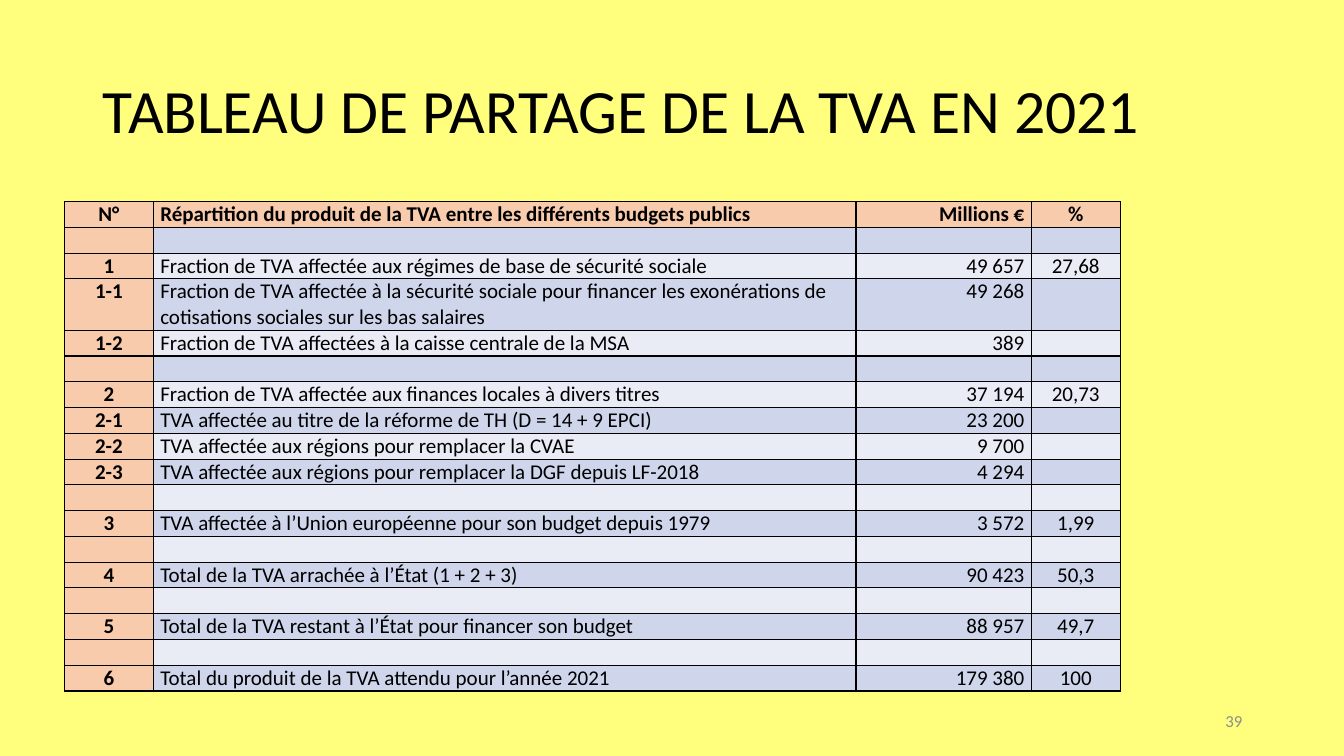
from dataclasses import dataclass

from lxml.etree import SubElement
from pptx import Presentation
from pptx.dml.color import RGBColor
from pptx.enum.text import MSO_ANCHOR as ANCHOR, MSO_AUTO_SIZE as AUTO, PP_ALIGN as ALIGN
from pptx.oxml.ns import qn
from pptx.util import Inches, Pt


@dataclass(frozen=True)
class Theme:
    font: str = "Calibri"
    background: str = "FFFF7D"
    text: str = "000000"
    muted: str = "8C8C8C"
    heading: str = "F8CBAD"
    bands: tuple = ("E9EBF5", "CFD5EA")
    title_size: int = 44
    table_size: int = 15
    number_size: int = 12


THEME = Theme()
COLUMNS = (0.88, 6.97, 1.74, 0.88)
ALIGNMENTS = (ALIGN.CENTER, ALIGN.LEFT, ALIGN.RIGHT, ALIGN.CENTER)
ROW_HEIGHT = 0.25
BLANK = ("", "", "", "")
ROWS = (
    ("N°", "Répartition du produit de la TVA entre les différents budgets publics", "Millions €", "%"),
    BLANK,
    ("1", "Fraction de TVA affectée aux régimes de base de sécurité sociale", "49 657", "27,68"),
    ("1-1", "Fraction de TVA affectée à la sécurité sociale pour financer les exonérations de "
            "cotisations sociales sur les bas salaires", "49 268", ""),
    ("1-2", "Fraction de TVA affectées à la caisse centrale de la MSA", "389", ""),
    BLANK,
    ("2", "Fraction de TVA affectée aux finances locales à divers titres", "37 194", "20,73"),
    ("2-1", "TVA affectée au titre de la réforme de TH (D = 14 + 9 EPCI)", "23 200", ""),
    ("2-2", "TVA affectée aux régions pour remplacer la CVAE", "9 700", ""),
    ("2-3", "TVA affectée aux régions pour remplacer la DGF depuis LF-2018", "4 294", ""),
    BLANK,
    ("3", "TVA affectée à l’Union européenne pour son budget depuis 1979", "3 572", "1,99"),
    BLANK,
    ("4", "Total de la TVA arrachée à l’État (1 + 2 + 3)", "90 423", "50,3"),
    BLANK,
    ("5", "Total de la TVA restant à l’État pour financer son budget", "88 957", "49,7"),
    BLANK,
    ("6", "Total du produit de la TVA attendu pour l’année 2021", "179 380", "100"),
)
TALL_ROW = 3


def format_paragraph(p, size, color, align, bold=False):
    p.alignment = align
    p.font.name = THEME.font
    p.font.size = Pt(size)
    p.font.bold = bold
    p.font.color.rgb = RGBColor.from_string(color)


def add_borders(cell):
    tc_pr = cell._tc.get_or_add_tcPr()
    for side in ("a:lnL", "a:lnR", "a:lnT", "a:lnB"):
        ln = SubElement(tc_pr, qn(side), w=str(Pt(1)))
        fill = SubElement(ln, qn("a:solidFill"))
        SubElement(fill, qn("a:srgbClr"), val=THEME.text)


def add_title(slide, text, left, top, width, height):
    sp = slide.shapes.title
    sp.left, sp.top, sp.width, sp.height = map(Inches, (left, top, width, height))
    tf = sp.text_frame
    tf.text = text
    tf.word_wrap = True
    tf.auto_size = AUTO.NONE
    tf.vertical_anchor = ANCHOR.MIDDLE
    p = tf.paragraphs[0]
    p.line_spacing = 0.9
    format_paragraph(p, THEME.title_size, THEME.text, ALIGN.LEFT)


def fill_cell(cell, text, row, col):
    heading = row == 0 or col == 0
    cell.margin_left = cell.margin_right = Inches(0.07)
    cell.margin_top = cell.margin_bottom = 0
    cell.text = text
    p = cell.text_frame.paragraphs[0]
    format_paragraph(p, THEME.table_size, THEME.text, ALIGNMENTS[col], heading)
    if not text:
        SubElement(p._p, qn("a:endParaRPr"), sz=str(THEME.table_size * 100))
    add_borders(cell)
    cell.fill.solid()
    color = THEME.heading if heading else THEME.bands[row % 2]
    cell.fill.fore_color.rgb = RGBColor.from_string(color)


def add_vat_table(slide, left, top):
    height = ROW_HEIGHT * (len(ROWS) + 1)
    frame = slide.shapes.add_table(len(ROWS), len(COLUMNS), Inches(left), Inches(top),
                                   Inches(sum(COLUMNS)), Inches(height))
    table = frame.table
    table.first_row = table.horz_banding = False
    for column, width in zip(table.columns, COLUMNS):
        column.width = Inches(width)
    for r, values in enumerate(ROWS):
        table.rows[r].height = Inches(ROW_HEIGHT * (2 if r == TALL_ROW else 1))
        for c, text in enumerate(values):
            fill_cell(table.cell(r, c), text, r, c)


def add_page_number(slide, number, left, top, width, height):
    sp = slide.shapes.add_textbox(*map(Inches, (left, top, width, height)))
    tf = sp.text_frame
    tf.word_wrap = True
    tf.vertical_anchor = ANCHOR.MIDDLE
    tf.text = number
    format_paragraph(tf.paragraphs[0], THEME.number_size, THEME.muted, ALIGN.RIGHT)


def main():
    prs = Presentation()
    prs.slide_width, prs.slide_height = Inches(13.33), Inches(7.5)
    slide = prs.slides.add_slide(prs.slide_layouts[5])
    slide.background.fill.solid()
    slide.background.fill.fore_color.rgb = RGBColor.from_string(THEME.background)
    add_title(slide, "TABLEAU DE PARTAGE DE LA TVA EN 2021", 0.92, 0.4, 11.5, 1.45)
    add_vat_table(slide, 0.64, 2)
    add_page_number(slide, "39", 9.42, 6.95, 3, 0.4)
    prs.save("out.pptx")


if __name__ == "__main__":
    main()
